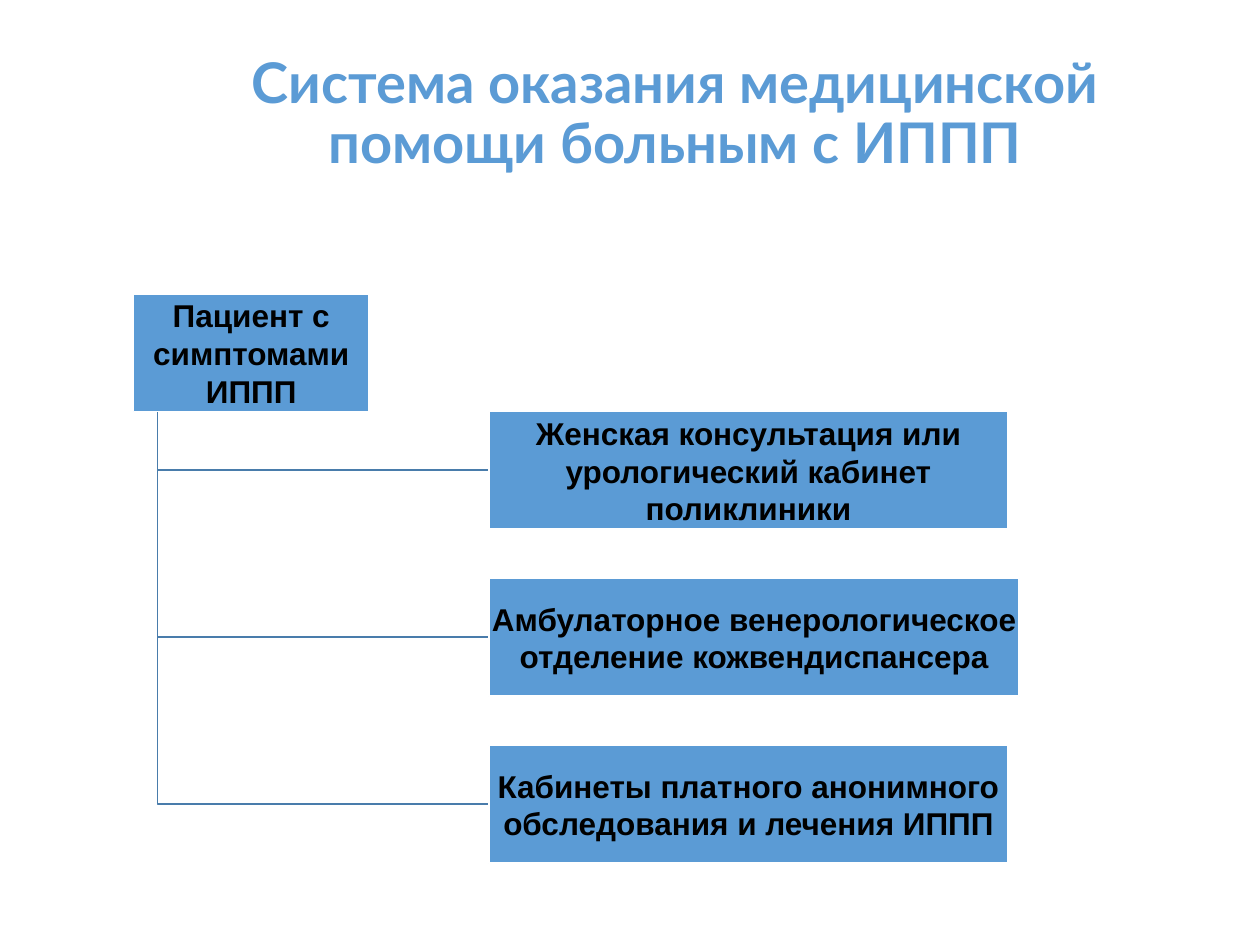
from pptx import Presentation
from pptx.dml.color import RGBColor
from pptx.enum.shapes import MSO_SHAPE
from pptx.enum.text import MSO_ANCHOR, PP_ALIGN
from pptx.util import Pt

RECTANGLE = MSO_SHAPE.RECTANGLE
MIDDLE = MSO_ANCHOR.MIDDLE
CENTER = PP_ALIGN.CENTER

# Content
TITLE = "Система оказания медицинской помощи больным с ИППП"
PATIENT = "Пациент с симптомами ИППП"
SERVICES = [  # text, box width
    ("Женская консультация или урологический кабинет поликлиники", 296.6),
    ("Амбулаторное венерологическое отделение кожвендиспансера", 303.1),
    ("Кабинеты платного анонимного обследования и лечения ИППП", 296.6),
]

# Layout, in points
TITLE_AREA = (76.3, 18, 619.2, 95.8)
PATIENT_LEFT, PATIENT_TOP, PATIENT_WIDTH = 76.3, 168, 134.6
BOX_HEIGHT = 67.2
SERVICE_LEFT, SERVICE_PITCH = 279.4, 95.4
TRUNK_X = 90
PATIENT_BOTTOM = PATIENT_TOP + BOX_HEIGHT

# Formats
BLUE, LINE_BLUE, WHITE, BLACK = "5B9BD5", "497CAB", "FFFFFF", "000000"
TITLE_FONT = {"name": "Lato", "size": Pt(32), "bold": True}
BOX_FONT = {"name": "Arial", "size": Pt(18), "bold": True}
TITLE_FRAME = {"word_wrap": True, "vertical_anchor": MIDDLE}
BOX_FRAME = TITLE_FRAME | {
    f"margin_{side}": Pt(0.7) for side in ("left", "top", "right", "bottom")
}


def color(hex_value):
    return RGBColor.from_string(hex_value)


def set_all(target, values):
    for name, value in values.items():
        setattr(target, name, value)


def write(shape, text, frame_format, font_format, text_color):
    frame = shape.text_frame
    set_all(frame, frame_format)
    paragraph = frame.paragraphs[0]
    paragraph.alignment = CENTER
    run = paragraph.add_run()
    run.text = text
    set_all(run.font, font_format)
    run.font.color.rgb = color(text_color)
    return paragraph


def set_line(shape, line_color):
    shape.shadow.inherit = False
    shape.line.color.rgb = color(line_color)
    shape.line.width = Pt(1)


def add_box(slide, text, left, top, width):
    box = slide.shapes.add_shape(RECTANGLE, Pt(left), Pt(top), Pt(width), Pt(BOX_HEIGHT))
    box.fill.solid()
    box.fill.fore_color.rgb = color(BLUE)
    set_line(box, WHITE)
    write(box, text, BOX_FRAME, BOX_FONT, BLACK)


def add_branch(slide, y):
    builder = slide.shapes.build_freeform(Pt(TRUNK_X), Pt(PATIENT_BOTTOM))
    builder.add_line_segments(
        [(Pt(TRUNK_X), Pt(y)), (Pt(SERVICE_LEFT), Pt(y))], close=False
    )
    branch = builder.convert_to_shape()
    branch.fill.background()
    set_line(branch, LINE_BLUE)


def main():
    deck = Presentation()
    deck.slide_width, deck.slide_height = Pt(720), Pt(540)
    slide = deck.slides.add_slide(deck.slide_layouts[6])

    # Title
    title = slide.shapes.add_textbox(*map(Pt, TITLE_AREA))
    write(title, TITLE, TITLE_FRAME, TITLE_FONT, BLUE).line_spacing = 0.9

    # Branches from the patient, behind the boxes
    tops = [PATIENT_BOTTOM + i * SERVICE_PITCH for i in range(len(SERVICES))]
    for top in reversed(tops):
        add_branch(slide, top + BOX_HEIGHT / 2)

    # Patient and services
    add_box(slide, PATIENT, PATIENT_LEFT, PATIENT_TOP, PATIENT_WIDTH)
    for (service, width), top in zip(SERVICES, tops):
        add_box(slide, service, SERVICE_LEFT, top, width)

    deck.save("out.pptx")


if __name__ == "__main__":
    main()
